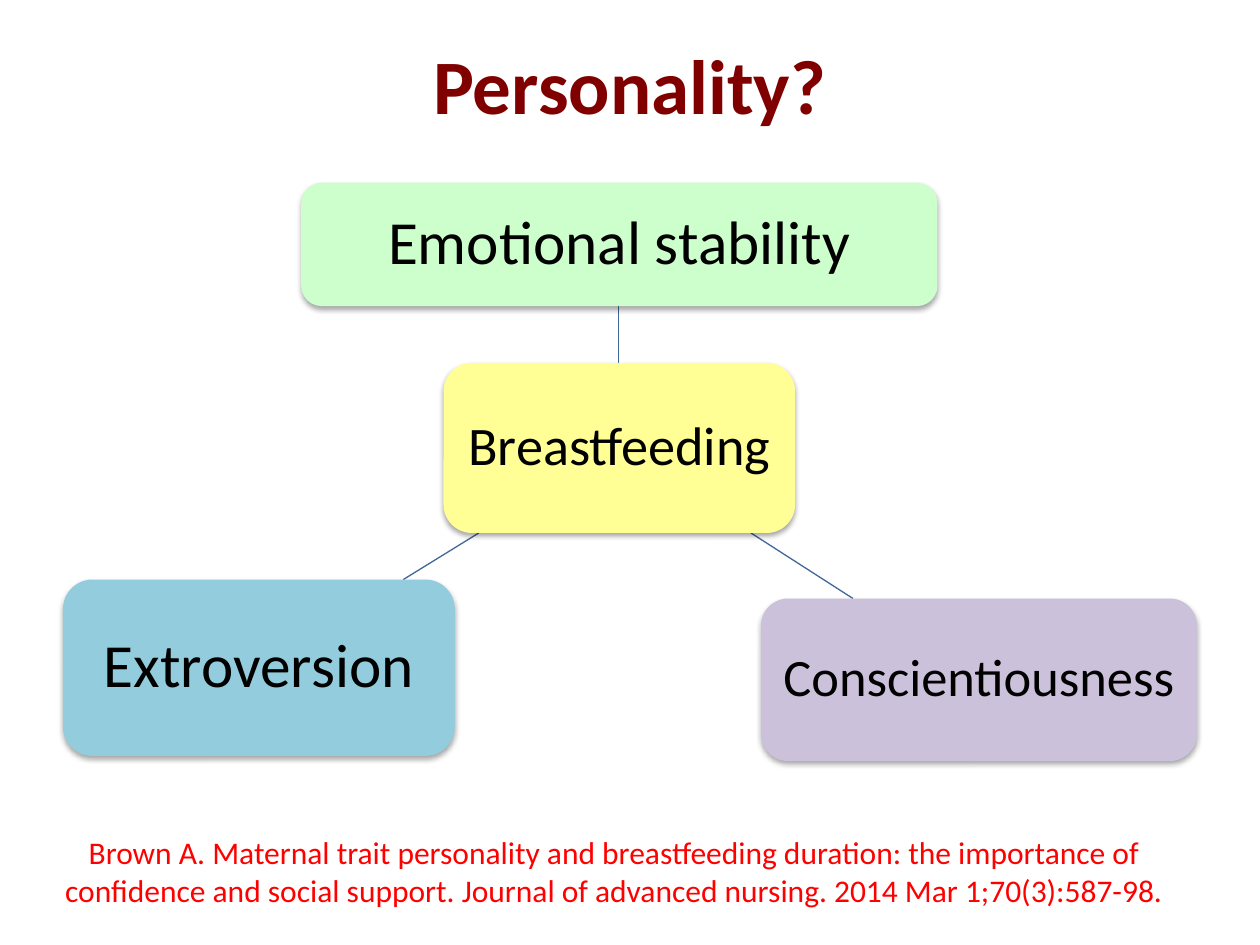
from lxml import etree
from pptx import Presentation
from pptx.dml.color import RGBColor
from pptx.enum.shapes import MSO_CONNECTOR, MSO_SHAPE
from pptx.enum.text import MSO_ANCHOR, PP_ALIGN
from pptx.oxml import parse_xml
from pptx.oxml.ns import nsdecls, qn
from pptx.util import Inches, Pt

ROUNDED = MSO_SHAPE.ROUNDED_RECTANGLE
STRAIGHT = MSO_CONNECTOR.STRAIGHT
MIDDLE, TOP = MSO_ANCHOR.MIDDLE, MSO_ANCHOR.TOP
CENTER = PP_ALIGN.CENTER

COLORS = {
    "title": "800000", "citation": "FF0000", "text": "000000", "link": "3F6797",
    "center": "FFFF95", "stability": "CCFFCC",
    "conscientiousness": "CCC1DA", "extroversion": "93CDDD",
}
SHADOW = (
    f'<a:effectLst {nsdecls("a")}>'
    '<a:outerShdw blurRad="40000" dist="23000" dir="5400000" rotWithShape="0">'
    '<a:srgbClr val="000000"><a:alpha val="35000"/></a:srgbClr>'
    '</a:outerShdw></a:effectLst>'
)

# Label, fill, size of text, box (left, top, width, height)
TRAITS = [
    ("Breastfeeding", "center", 31, (2.77, 1.43, 2.79, 1.35)),
    ("Emotional stability", "stability", 35, (1.64, 0, 5.05, 0.98)),
    ("Conscientiousness", "conscientiousness", 30, (5.29, 3.3, 3.46, 1.29)),
    ("Extroversion", "extroversion", 35, (-0.25, 3.15, 3.11, 1.4)),
]
# Start x, start y, end x, end y
LINKS = [
    (4.16, 1.43, 4.16, 0.98),
    (5.21, 2.78, 6.02, 3.3),
    (3.05, 2.78, 2.45, 3.15),
]


def color(name):
    return RGBColor.from_string(COLORS[name])


def write_text(shape, text, font_values, anchor=MIDDLE, inset=0.1, line_spacing=1,
               wrap=True):
    frame = shape.text_frame
    frame.word_wrap = wrap
    frame.vertical_anchor = anchor
    frame.margin_left = frame.margin_right = Inches(inset)
    frame.margin_top = frame.margin_bottom = Inches(0.05)
    paragraph = frame.paragraphs[0]
    paragraph.alignment = CENTER
    paragraph.line_spacing = line_spacing
    run = paragraph.add_run()
    run.text = text
    values = {"name": "Calibri", **font_values}
    run.font.color.rgb = color(values.pop("color"))
    for attribute, value in values.items():
        setattr(run.font, attribute, value)


def add_text(slide, box, text, font_values, anchor):
    shape = slide.shapes.add_textbox(*map(Inches, box))
    write_text(shape, text, font_values, anchor)


def add_trait(slide, left, top, label, fill, size, box):
    x, y, width, height = box
    shape = slide.shapes.add_shape(
        ROUNDED, Inches(left + x), Inches(top + y), Inches(width), Inches(height))
    shape.fill.solid()
    shape.fill.fore_color.rgb = color(fill)
    shape.line.fill.background()
    shape._element.spPr.append(parse_xml(SHADOW))
    write_text(shape, label, {"size": Pt(size), "color": "text"},
               inset=0.02, line_spacing=0.9, wrap=False)


def add_link(slide, left, top, points):
    x1, y1, x2, y2 = points
    connector = slide.shapes.add_connector(
        STRAIGHT, Inches(left + x1), Inches(top + y1),
        Inches(left + x2), Inches(top + y2))
    connector.line.color.rgb = color("link")
    connector.line.width = Pt(0.75)
    etree.SubElement(connector._element.spPr, qn("a:effectLst"))


def add_trait_diagram(slide, left, top):
    for points in LINKS:
        add_link(slide, left, top, points)
    for trait in TRAITS:
        add_trait(slide, left, top, *trait)


def main():
    presentation = Presentation()
    presentation.slide_width, presentation.slide_height = Inches(10), Inches(7.5)
    slide = presentation.slides.add_slide(presentation.slide_layouts[6])
    add_text(slide, (0.5, 0.04, 9, 1.25), "Personality?",
             {"size": Pt(44), "bold": True, "color": "title"}, MIDDLE)
    add_trait_diagram(slide, 0.75, 1.45)
    add_text(slide, (0.25, 6.56, 9.25, 0.71),
             "Brown A. Maternal trait personality and breastfeeding duration: "
             "the importance of confidence and social support. "
             "Journal of advanced nursing. 2014 Mar 1;70(3):587-98.",
             {"size": Pt(18), "color": "citation"}, TOP)
    presentation.save("out.pptx")


if __name__ == "__main__":
    main()
